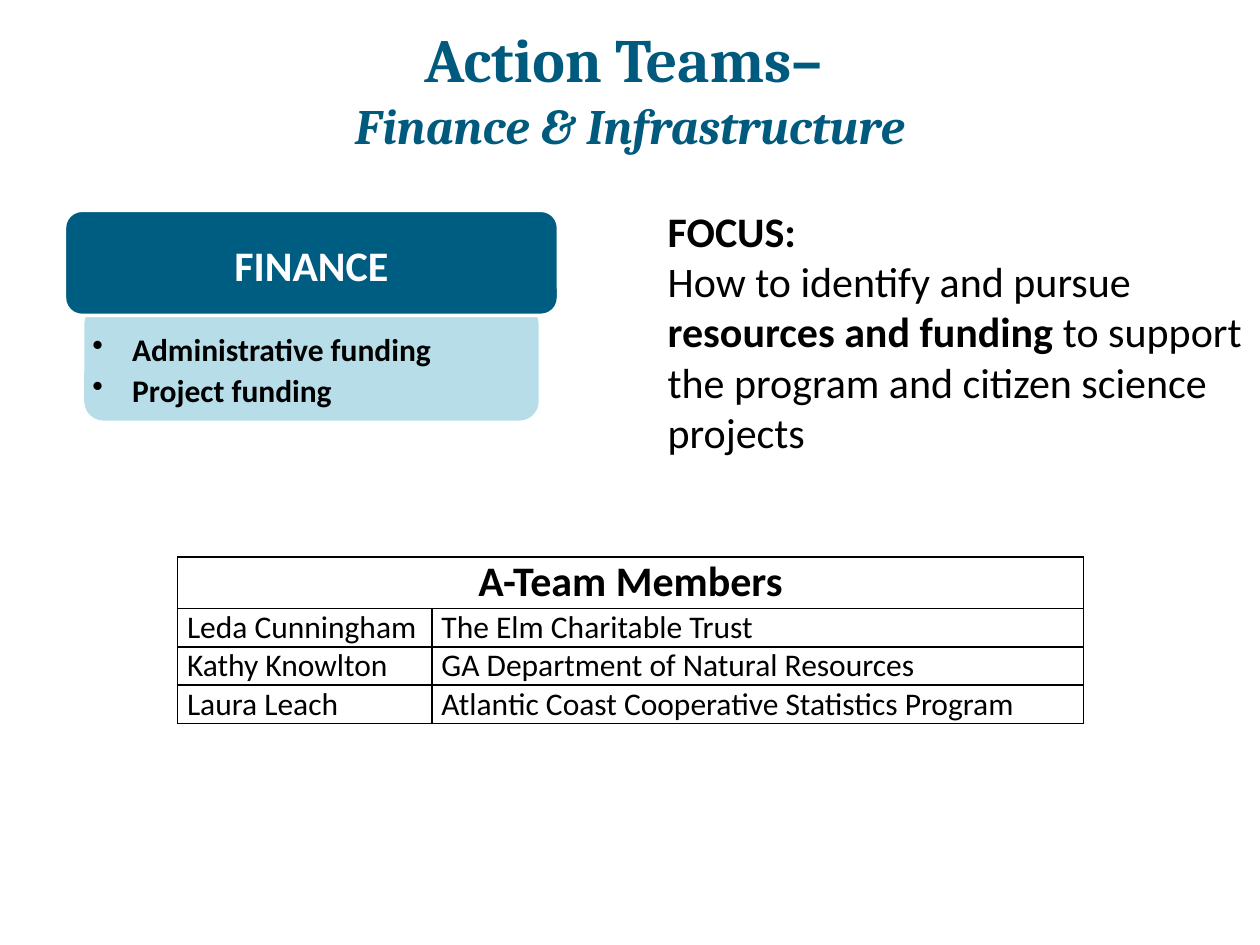
import pptx
import pptx.dml.color
import pptx.enum.shapes
import pptx.enum.text
import pptx.oxml
import pptx.oxml.ns
import pptx.util
from lxml import etree

Cm = pptx.util.Cm
Pt = pptx.util.Pt
ALIGN = pptx.enum.text.PP_ALIGN
ANCHOR = pptx.enum.text.MSO_ANCHOR

TEAL = "005A7E"
HEADER_FILL = "005D82"
PALE_BLUE = "B7DEE8"
BLACK = "000000"
WHITE = "FFFFFF"


def color(hex_string):
    return pptx.dml.color.RGBColor.from_string(hex_string)


def format_paragraph(paragraph, size, hex_string=BLACK, bold=None, align=ALIGN.LEFT,
                     name="Calibri"):
    paragraph.alignment = align
    font = paragraph.font
    font.name, font.size, font.bold = name, Pt(size), bold
    font.color.rgb = color(hex_string)


def set_margins(target, horizontal, vertical):
    target.margin_left = target.margin_right = Cm(horizontal)
    target.margin_top = target.margin_bottom = Cm(vertical)


def add_bullet(paragraph, indent):
    properties = paragraph._p.get_or_add_pPr()
    properties.set("marL", str(Cm(indent)))
    properties.set("indent", str(-Cm(indent)))
    bullet = etree.SubElement(properties, pptx.oxml.ns.qn("a:buChar"))
    bullet.set("char", "•")


def add_border(cell, hex_string, width):
    properties = cell._tc.get_or_add_tcPr()
    for position, side in enumerate(("lnL", "lnR", "lnT", "lnB")):
        line = pptx.oxml.parse_xml(
            f'<a:{side} {pptx.oxml.ns.nsdecls("a")} w="{Pt(width)}">'
            f'<a:solidFill><a:srgbClr val="{hex_string}"/></a:solidFill></a:{side}>')
        properties.insert(position, line)


def set_title(slide, left, top, width, height):
    title = slide.shapes.title
    title.left, title.top, title.width, title.height = map(Cm, (left, top, width, height))
    frame = title.text_frame
    frame.auto_size = pptx.enum.text.MSO_AUTO_SIZE.NONE
    frame.vertical_anchor = ANCHOR.MIDDLE
    frame.text = "Action Teams– \nFinance & Infrastructure"
    for paragraph, size in zip(frame.paragraphs, (35.1, 28.3)):
        format_paragraph(paragraph, size, TEAL, True, ALIGN.CENTER, "Cambria")
    frame.paragraphs[1].font.italic = True


def add_focus(slide, left, top, width, height):
    box = slide.shapes.add_textbox(Cm(left), Cm(top), Cm(width), Cm(height))
    frame = box.text_frame
    frame.word_wrap = True
    heading = frame.paragraphs[0]
    heading.text = "FOCUS:"
    format_paragraph(heading, 24, bold=True)
    statement = frame.add_paragraph()
    format_paragraph(statement, 24)
    for text, bold in (("How to identify and pursue ", False),
                       ("resources and funding", True),
                       (" to support the program and citizen science projects", False)):
        run = statement.add_run()
        run.text = text
        run.font.bold = bold


def add_rounded_box(slide, left, top, width, height, fill):
    shape = slide.shapes.add_shape(pptx.enum.shapes.MSO_SHAPE.ROUNDED_RECTANGLE,
                                   Cm(left), Cm(top), Cm(width), Cm(height))
    shape.shadow.inherit = False
    shape.fill.solid()
    shape.fill.fore_color.rgb = color(fill)
    shape.text_frame.word_wrap = True
    return shape


def add_finance_card(slide, left, top, width, height):
    """Place a header that overlaps the top of a narrower box of bullets."""
    inset = 0.4
    details_top = 0.45 * height
    details = add_rounded_box(slide, left + inset, top + details_top,
                              width - 2 * inset, height - details_top, PALE_BLUE)
    details.line.fill.background()
    frame = details.text_frame
    frame.vertical_anchor = ANCHOR.BOTTOM
    set_margins(frame, 0.05, 0.13)
    frame.text = "Administrative funding\nProject funding"
    for paragraph in frame.paragraphs:
        paragraph.line_spacing = 1.07
        add_bullet(paragraph, 0.8)
        format_paragraph(paragraph, 18, bold=True)

    header = add_rounded_box(slide, left, top, width, height / 2, HEADER_FILL)
    header.line.color.rgb = color(WHITE)
    header.line.width = Pt(2)
    header.text_frame.vertical_anchor = ANCHOR.MIDDLE
    label = header.text_frame.paragraphs[0]
    label.text = "FINANCE"
    label.line_spacing = 1.07
    format_paragraph(label, 24, WHITE, True, ALIGN.CENTER)


def add_members_table(slide, left, top, width, height):
    rows = [
        ("A-Team Members", ""),
        ("Leda Cunningham", "The Elm Charitable Trust"),
        ("Kathy Knowlton", "GA Department of Natural Resources"),
        ("Laura Leach", "Atlantic Coast Cooperative Statistics Program"),
    ]
    table = slide.shapes.add_table(len(rows), 2, Cm(left), Cm(top),
                                   Cm(width), Cm(height)).table
    table.first_row = table.horz_banding = False
    name_width, member_height = 5.13, 0.77
    table.columns[0].width = Cm(name_width)
    table.columns[1].width = Cm(width - name_width)
    table.rows[0].height = Cm(height - member_height * (len(rows) - 1))
    for row_index, texts in enumerate(rows):
        is_heading = row_index == 0
        if not is_heading:
            table.rows[row_index].height = Cm(member_height)
        for column_index, text in enumerate(texts):
            cell = table.cell(row_index, column_index)
            set_margins(cell, 0.19, 0)
            cell.fill.background()
            add_border(cell, BLACK, 1)
            cell.text = text
            format_paragraph(cell.text_frame.paragraphs[0], 24 if is_heading else 18,
                             bold=is_heading,
                             align=ALIGN.CENTER if is_heading else ALIGN.LEFT)
    table.cell(0, 0).merge(table.cell(0, 1))


def main():
    presentation = pptx.Presentation()
    presentation.slide_width, presentation.slide_height = Cm(25.4), Cm(19.05)
    slide = presentation.slides.add_slide(presentation.slide_layouts.get_by_name("Title Only"))
    set_title(slide, 0, -0.28, 25.4, 4.09)
    add_focus(slide, 13.21, 4.01, 12.27, 12.9)
    add_finance_card(slide, 1.3, 4.24, 9.96, 4.24)
    add_members_table(slide, 3.58, 11.23, 18.26, 3.35)
    presentation.save("out.pptx")


if __name__ == "__main__":
    main()
